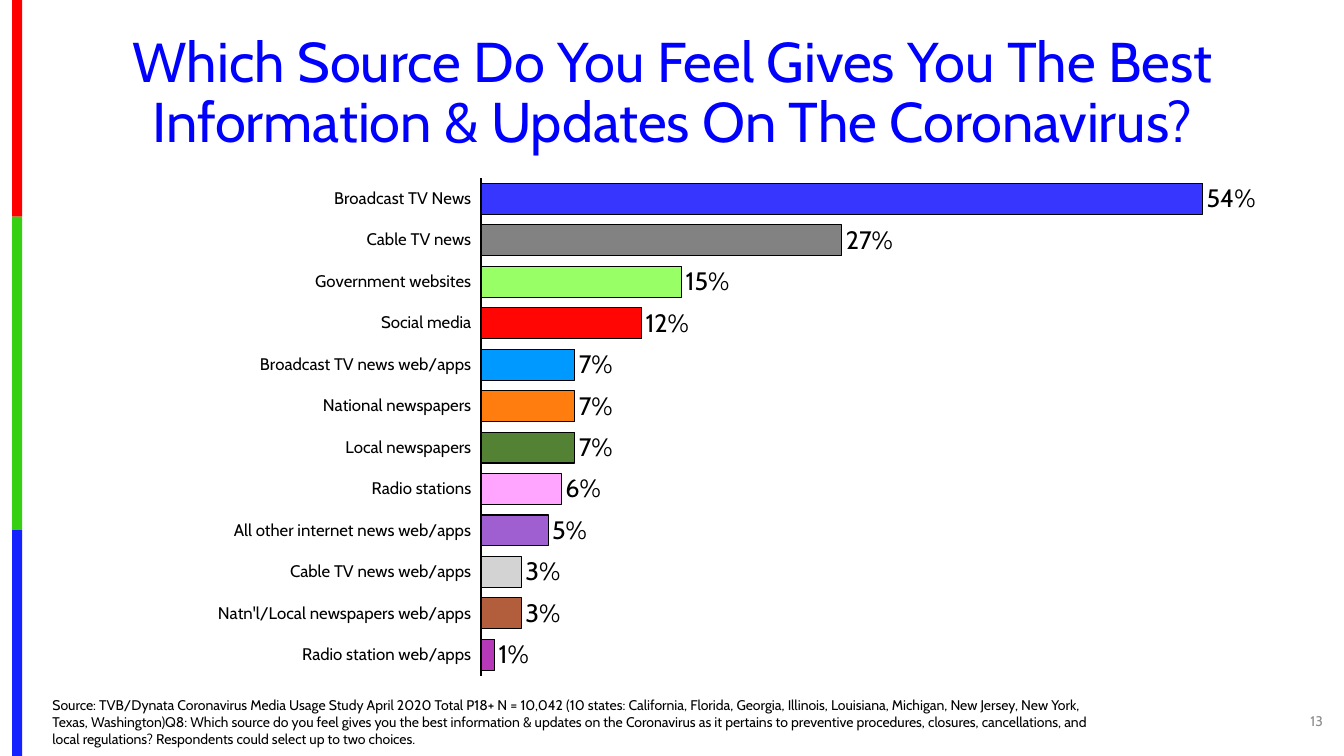
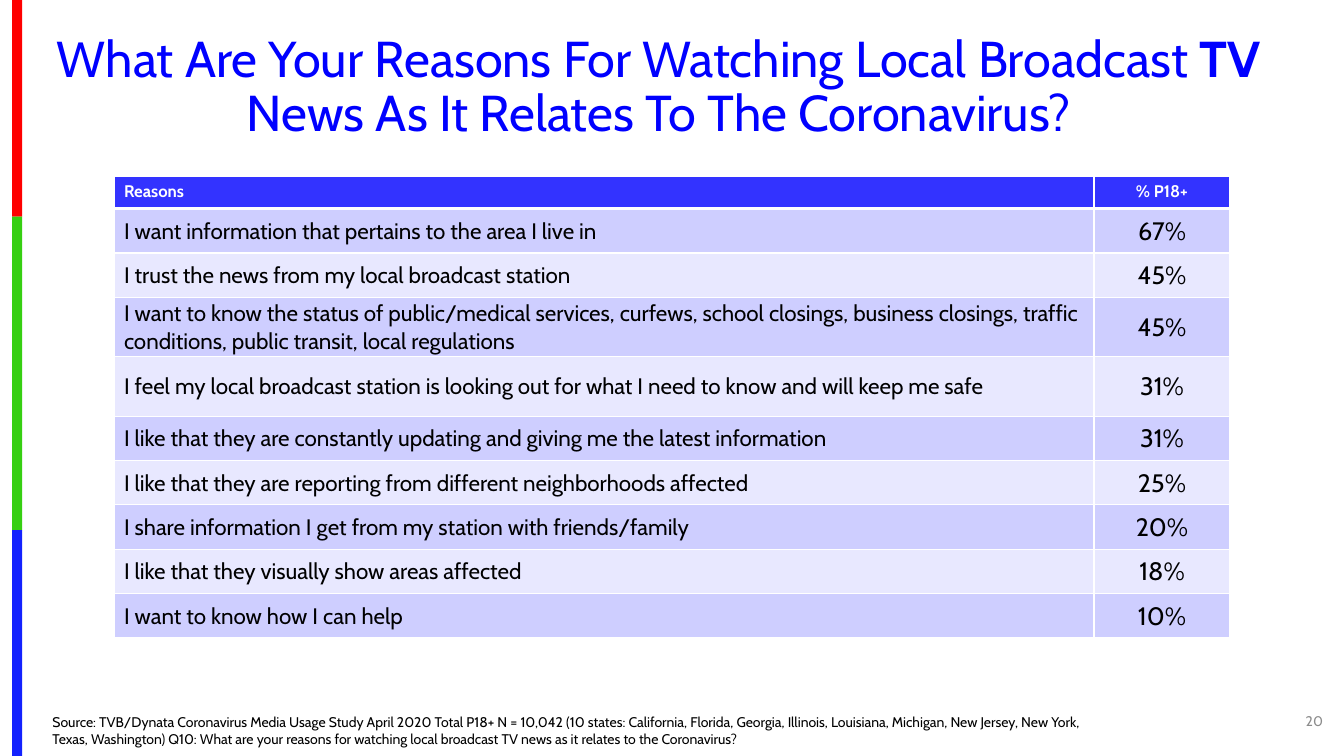
from lxml import etree
from pptx import Presentation
from pptx.chart.data import CategoryChartData
from pptx.dml.color import RGBColor
from pptx.enum.chart import XL_CHART_TYPE, XL_LABEL_POSITION, XL_TICK_LABEL_POSITION, XL_TICK_MARK
from pptx.enum.shapes import MSO_SHAPE
from pptx.enum.text import MSO_ANCHOR, MSO_AUTO_SIZE, PP_ALIGN
from pptx.oxml import parse_xml
from pptx.oxml.ns import nsdecls, qn
from pptx.util import Inches, Pt

BAR, LABEL_END = XL_CHART_TYPE.BAR_CLUSTERED, XL_LABEL_POSITION.OUTSIDE_END
LABELS_LOW, NO_TICK = XL_TICK_LABEL_POSITION.LOW, XL_TICK_MARK.NONE
LEFT, CENTER, RIGHT = PP_ALIGN.LEFT, PP_ALIGN.CENTER, PP_ALIGN.RIGHT
TOP, MIDDLE, BOTTOM = MSO_ANCHOR.TOP, MSO_ANCHOR.MIDDLE, MSO_ANCHOR.BOTTOM

FONT = "Cabin"
BLACK = RGBColor(0x00, 0x00, 0x00)
WHITE = RGBColor(0xFF, 0xFF, 0xFF)
GRAY = RGBColor(0x8C, 0x8C, 0x8C)
TITLE_BLUE = RGBColor(0x00, 0x00, 0xFF)
BAND_RED = RGBColor(0xFE, 0x00, 0x00)
BAND_GREEN = RGBColor(0x36, 0xCF, 0x12)
BAND_BLUE = RGBColor(0x13, 0x22, 0xFE)
HEADER_BLUE = RGBColor(0x33, 0x33, 0xFF)
ROW_DARK = RGBColor(0xCE, 0xCE, 0xFF)
ROW_LIGHT = RGBColor(0xE8, 0xE8, 0xFF)


def write(frame, text, size, color=BLACK, align=LEFT, bold=False, bold_part=None, spacing=1.0):
    """Fill the first paragraph of a frame; bold_part is a word set in bold."""
    para = frame.paragraphs[0]
    para.alignment = align
    para.line_spacing = spacing
    para.space_before = Pt(0)
    pieces = [text]
    if bold_part:
        before, after = text.split(bold_part)
        pieces = [before, bold_part, after]
    for piece in pieces:
        span = para.add_run()
        span.text = piece
        span.font.name = FONT
        span.font.size = Pt(size)
        span.font.bold = bold or piece == bold_part
        span.font.color.rgb = color


def set_borders(cell, top, bottom):
    """Draw white borders; top and bottom are widths in points."""
    widths = {"lnL": 1, "lnR": 1, "lnT": top, "lnB": bottom}
    for index, (tag, width) in enumerate(widths.items()):
        line = parse_xml(
            f'<a:{tag} {nsdecls("a")} w="{Pt(width)}"><a:solidFill>'
            f'<a:srgbClr val="{WHITE}"/></a:solidFill></a:{tag}>')
        cell._tc.get_or_add_tcPr().insert(index, line)


deck = Presentation()
deck.slide_width, deck.slide_height = Inches(13.33), Inches(7.5)
layout = deck.slide_layouts[1]

# Title, source note and page number of each slide
STUDY = ("Source: TVB/Dynata Coronavirus Media Usage Study April 2020 Total P18+ N = 10,042 "
         "(10 states: California, Florida, Georgia, Illinois, Louisiana, Michigan, New Jersey, "
         "New York, Texas, Washington)")
PAGES = [
    dict(title="Which Source Do You Feel Gives You The Best Information & Updates "
               "On The Coronavirus?",
         place=(0.42, 0.28, 12.5, 1.31), size=40, bold_part=None, number="13",
         source=STUDY + "Q8: Which source do you feel gives you the best information & updates "
                "on the Coronavirus as it pertains to preventive procedures, closures, "
                "cancellations, and local regulations? Respondents could select up to two choices."),
    dict(title="What Are Your Reasons For Watching Local Broadcast TV News As It Relates "
               "To The Coronavirus?",
         place=(0.16, 0.28, 12.75, 1.19), size=36, bold_part="TV", number="20",
         source=STUDY + " Q10: What are your reasons for watching local broadcast TV news "
                "as it relates to the Coronavirus?"),
]
slides = []
for content in PAGES:
    page = deck.slides.add_slide(layout)
    slides.append(page)

    title = page.shapes.title
    title.left, title.top, title.width, title.height = map(Inches, content["place"])
    title.text_frame.auto_size = MSO_AUTO_SIZE.NONE
    title.text_frame.vertical_anchor = MIDDLE
    write(title.text_frame, content["title"], content["size"], TITLE_BLUE, CENTER,
          bold_part=content["bold_part"], spacing=0.9)

    source = page.placeholders[1]
    source.left, source.top, source.width, source.height = map(Inches, (0.42, 7.19, 10.73, 0.27))
    source.text_frame.auto_size = MSO_AUTO_SIZE.NONE
    source.text_frame.vertical_anchor = BOTTOM
    properties = source.text_frame.paragraphs[0]._p.get_or_add_pPr()
    properties.set("marL", "0")
    properties.set("indent", "0")
    etree.SubElement(properties, qn("a:buNone"))
    write(source.text_frame, content["source"], 10)

    number = page.shapes.add_textbox(Inches(12.62), Inches(6.95), Inches(0.6), Inches(0.4))
    number.text_frame.word_wrap = True
    number.text_frame.vertical_anchor = MIDDLE
    write(number.text_frame, content["number"], 10, GRAY, RIGHT)

chart_page, table_page = slides

# Colour bands down the left edge, moved to the shared layout
layout_tree = layout.placeholders[0].element.getparent()
band_top = 0
for index, (color, height) in enumerate([(BAND_RED, 2.15), (BAND_GREEN, 3.11), (BAND_BLUE, 2.24)]):
    band = chart_page.shapes.add_shape(
        MSO_SHAPE.RECTANGLE, Inches(0.12), Inches(band_top), Inches(0.1), Inches(height))
    band.shadow.inherit = False
    band.fill.solid()
    band.fill.fore_color.rgb = color
    band.line.fill.background()
    band.element.nvSpPr.cNvPr.set("id", str(20 + index))
    layout_tree.insert(2 + index, band.element)
    band_top += height

# Bar chart of news sources
SOURCES = [
    ("Broadcast TV News", 0.54, "3636FF"),
    ("Cable TV news", 0.27, "828282"),
    ("Government websites", 0.15, "99FF66"),
    ("Social media", 0.12, "FF0504"),
    ("Broadcast TV news web/apps", 0.07, "0099FF"),
    ("National newspapers", 0.07, "FF7C0F"),
    ("Local newspapers", 0.07, "548235"),
    ("Radio stations", 0.06, "FFA4FF"),
    ("All other internet news web/apps", 0.05, "9F5FD0"),
    ("Cable TV news web/apps", 0.03, "D3D3D3"),
    ("Natn'l/Local newspapers web/apps", 0.03, "B25E3C"),
    ("Radio station web/apps", 0.01, "B539B8"),
]
data = CategoryChartData(number_format="0%")
data.categories = [name for name, value, color in SOURCES]
data.add_series("Series 1", [value for name, value, color in SOURCES])
chart = chart_page.shapes.add_chart(
    BAR, Inches(0.56), Inches(1.5), Inches(12.25), Inches(5.22), data).chart
chart.has_legend = False
chart.has_title = False
chart.font.name, chart.font.size = FONT, Pt(10)
chart.font.color.rgb = BLACK

names = chart.category_axis
names.reverse_order = True
names.major_tick_mark = names.minor_tick_mark = NO_TICK
names.tick_label_position = LABELS_LOW
names.has_major_gridlines = False
names.tick_labels.font.name, names.tick_labels.font.size = FONT, Pt(12)
names.tick_labels.font.color.rgb = BLACK
names.format.line.color.rgb = BLACK
names.format.line.width = Pt(1.5)
values = chart.value_axis
values.minimum_scale, values.maximum_scale = 0, 0.6
values.has_major_gridlines = False
values.visible = False

plot = chart.plots[0]
plot.gap_width = 34
plot.vary_by_categories = False
plot.has_data_labels = True
labels = plot.data_labels
labels.show_value = True
labels.number_format, labels.number_format_is_linked = "0%", False
labels.position = LABEL_END
labels.font.name, labels.font.size = FONT, Pt(18)
labels.font.color.rgb = BLACK
for index, (name, value, color) in enumerate(SOURCES):
    bar = plot.series[0].points[index].format
    bar.fill.solid()
    bar.fill.fore_color.rgb = RGBColor.from_string(color)
    bar.line.color.rgb = BLACK
    bar.line.width = Pt(0.75)

# Fixed inner plot area
plot_area = chart._chartSpace.chart.plotArea
for old in plot_area.findall(qn("c:layout")):
    plot_area.remove(old)
plot_area.insert(0, parse_xml(
    f'<c:layout {nsdecls("c")}><c:manualLayout><c:layoutTarget val="inner"/>'
    '<c:xMode val="edge"/><c:yMode val="edge"/><c:x val="0.344"/><c:y val="0.051"/>'
    '<c:w val="0.649"/><c:h val="0.946"/></c:manualLayout></c:layout>'))

# Table of reasons
REASONS = [
    ("Reasons", "% P18+"),
    ("I want information that pertains to the area I live in", "67%"),
    ("I trust the news from my local broadcast station", "45%"),
    ("I want to know the status of public/medical services, curfews, school closings, "
     "business closings, traffic conditions, public transit, local regulations", "45%"),
    ("I feel my local broadcast station is looking out for what I need to know and "
     "will keep me safe", "31%"),
    ("I like that they are constantly updating and giving me the latest information", "31%"),
    ("I like that they are reporting from different neighborhoods affected", "25%"),
    ("I share information I get from my station with friends/family", "20%"),
    ("I like that they visually show areas affected", "18%"),
    ("I want to know how I can help", "10%"),
]
ROW_HEIGHTS = [0.32] + [0.44] * 2 + [0.59] * 2 + [0.44] * 5
table = table_page.shapes.add_table(
    len(REASONS), 2, Inches(1.13), Inches(1.75), Inches(11.07), Inches(sum(ROW_HEIGHTS))).table
table.columns[0].width, table.columns[1].width = Inches(9.72), Inches(1.35)
for row, texts in enumerate(REASONS):
    table.rows[row].height = Inches(ROW_HEIGHTS[row])
    for column, text in enumerate(texts):
        cell = table.cell(row, column)
        align = CENTER if column else LEFT
        cell.fill.solid()
        if row == 0:
            cell.fill.fore_color.rgb = HEADER_BLUE
            cell.vertical_anchor = TOP
            write(cell.text_frame, text, 12, WHITE, align, bold=True)
        else:
            cell.fill.fore_color.rgb = ROW_DARK if row % 2 else ROW_LIGHT
            cell.vertical_anchor = MIDDLE
            cell.margin_left = Inches(0.01 if column else 0.1)
            cell.margin_right = cell.margin_top = Inches(0.01)
            cell.margin_bottom = 0
            write(cell.text_frame, text, 18 if column else 16, BLACK, align)
        set_borders(cell, top=3 if row == 1 else 1, bottom=3 if row == 0 else 1)

deck.save("out.pptx")
